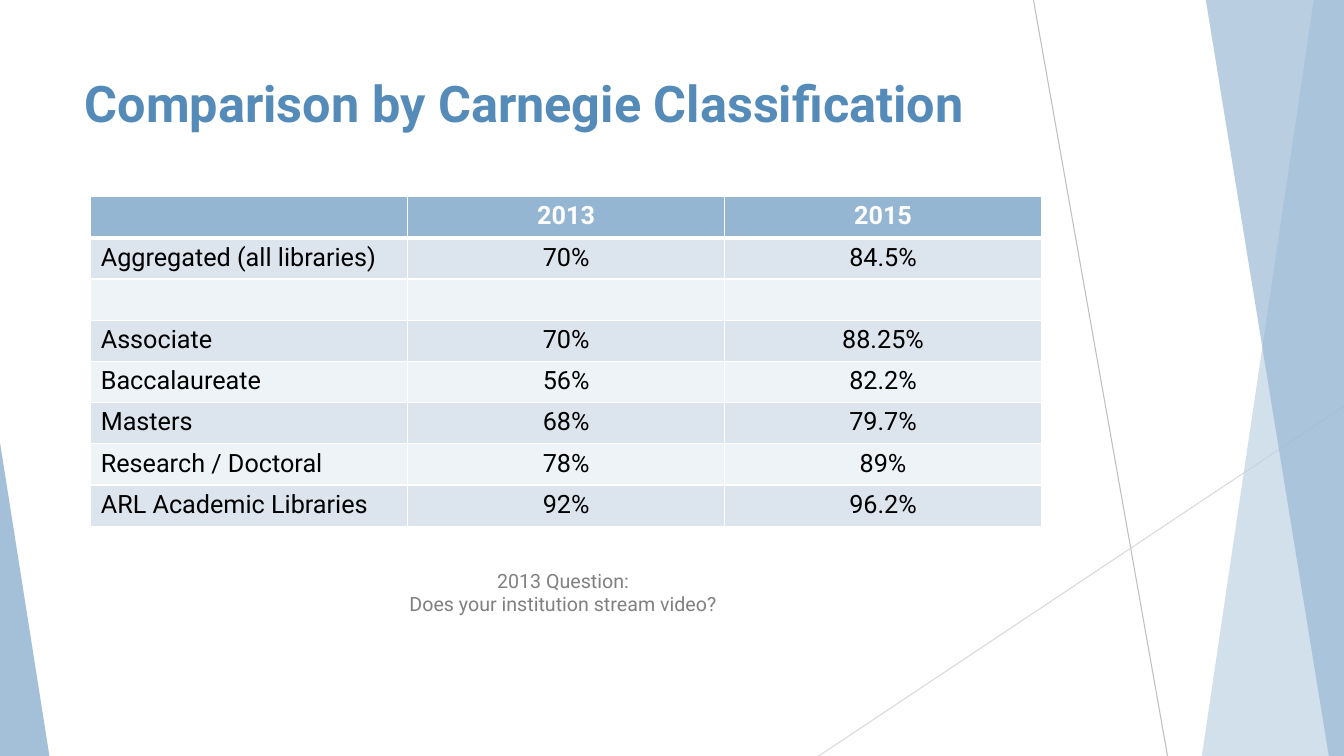
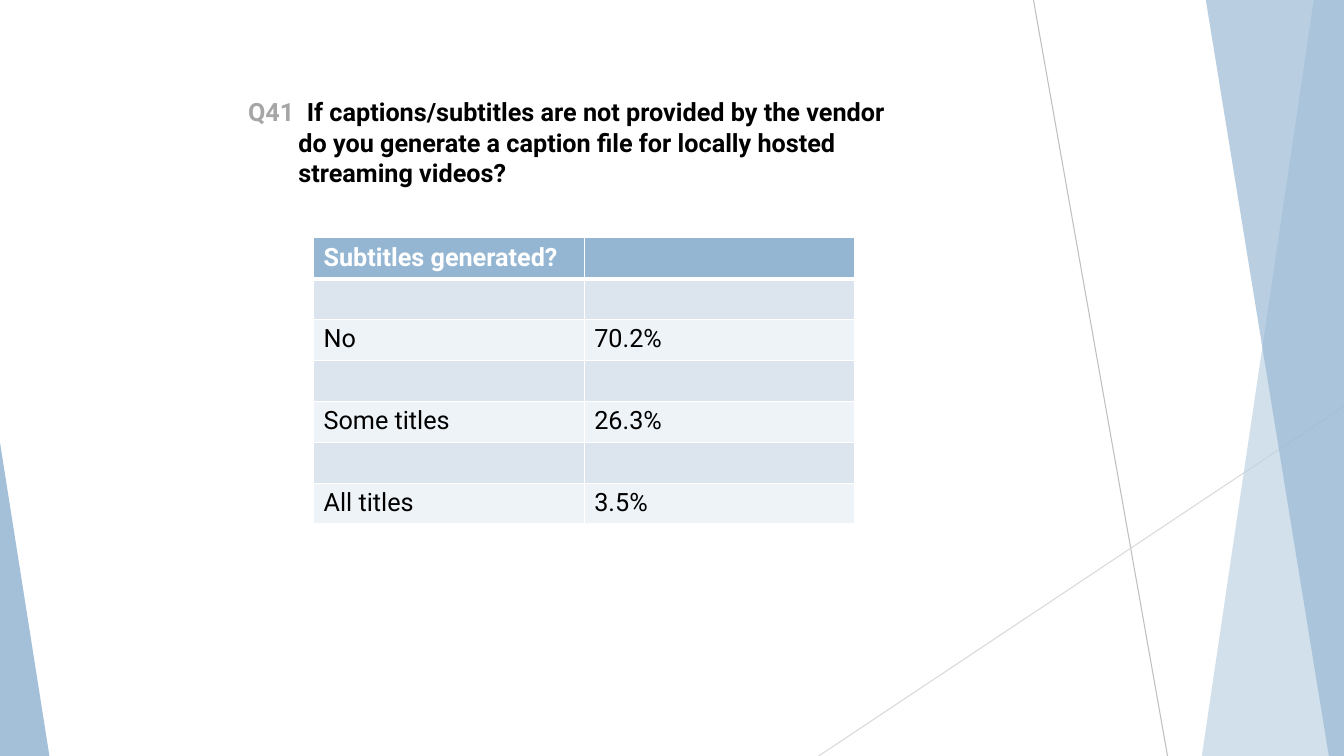
from lxml import etree
from pptx import Presentation
from pptx.dml.color import RGBColor
from pptx.enum.shapes import MSO_CONNECTOR, MSO_SHAPE
from pptx.enum.text import MSO_ANCHOR, MSO_AUTO_SIZE, PP_ALIGN
from pptx.oxml import parse_xml
from pptx.oxml.ns import nsdecls, qn
from pptx.util import Inches, Pt

STRAIGHT = MSO_CONNECTOR.STRAIGHT
TRIANGLE = MSO_SHAPE.ISOSCELES_TRIANGLE
LEFT, CENTER = PP_ALIGN.LEFT, PP_ALIGN.CENTER
TOP, FIXED = MSO_ANCHOR.TOP, MSO_AUTO_SIZE.NONE

FONT = "Roboto"
WIDE, HIGH = 13.33, 7.5
WHITE = RGBColor(0xFF, 0xFF, 0xFF)
BLACK = RGBColor(0, 0, 0)
BLUE = RGBColor(0x94, 0xB6, 0xD2)
PALE = RGBColor(0xBF, 0xD3, 0xE4)
DEEP = RGBColor(0x55, 0x8B, 0xB8)
ODD = RGBColor(0xDC, 0xE5, 0xEE)
EVEN = RGBColor(0xEE, 0xF3, 0xF7)
MUTED = RGBColor(0x80, 0x80, 0x80)
LABEL = RGBColor(0xA6, 0xA6, 0xA6)
GREY = RGBColor(0xBF, 0xBF, 0xBF)
LIGHT = RGBColor(0xD9, 0xD9, 0xD9)

# Content
TITLE = "Comparison by Carnegie Classification"
CLASSES = [
    ("", "2013", "2015"),
    ("Aggregated (all libraries)", "70%", "84.5%"),
    ("", "", ""),
    ("Associate", "70%", "88.25%"),
    ("Baccalaureate", "56%", "82.2%"),
    ("Masters", "68%", "79.7%"),
    ("Research / Doctoral", "78%", "89%"),
    ("ARL Academic Libraries", "92%", "96.2%"),
]
NOTE = ["2013 Question:", "Does your institution stream video?"]
NUMBER = "Q41  "
QUESTION = [
    "If captions/subtitles are not provided by the vendor",
    "do you generate a caption file for locally hosted",
    "streaming videos?",
]
TITLES = [
    ("Subtitles generated?", ""),
    ("", ""),
    ("No", "70.2%"),
    ("", ""),
    ("Some titles", "26.3%"),
    ("", ""),
    ("All titles", "3.5%"),
]

# Backdrop: lines as (from, to, colour), bands as (corners, colour, opacity)
LINES = [
    ((10.25, 0), (11.58, HIGH), GREY),
    ((WIDE, 4.03), (8.12, HIGH), LIGHT),
]
BANDS = [
    ([(13.03, 0), (WIDE, 0), (WIDE, HIGH), (11.92, HIGH)], PALE, 70),
    ([(11.96, 0), (WIDE, 0), (WIDE, HIGH), (13.18, HIGH)], BLUE, 65),
]
WEDGE = (0, 4.39, 0.49, 3.11)


def box(spot):
    return [Inches(v) for v in spot]


def style(para, size, color, bold=False, align=LEFT):
    para.alignment = align
    font = para.font
    font.name, font.size, font.bold = FONT, Pt(size), bold
    font.color.rgb = color


def tint(shape, color, share):
    shape.shadow.inherit = False
    shape.line.fill.background()
    shape.fill.solid()
    shape.fill.fore_color.rgb = color
    tone = shape.element.spPr.find(qn("a:solidFill"))[0]
    etree.SubElement(tone, qn("a:alpha")).set("val", str(share * 1000))


def backdrop(slide, master):
    """Draw the shared art, then hand it to the master."""
    shapes, art = slide.shapes, []
    for start, end, color in LINES:
        line = shapes.add_connector(STRAIGHT, *box(start + end))
        line.line.color.rgb = color
        line.line.width = Pt(0.75)
        etree.SubElement(line.element.spPr, qn("a:effectLst"))
        art.append(line)
    for points, color, share in BANDS:
        first, *rest = [box(p) for p in points]
        pen = shapes.build_freeform(*first)
        pen.add_line_segments(rest)
        band = pen.convert_to_shape()
        tint(band, color, share)
        art.append(band)
    wedge = shapes.add_shape(TRIANGLE, *box(WEDGE))
    wedge.adjustments[0] = 0
    tint(wedge, BLUE, 85)
    art.append(wedge)
    for num, shape in enumerate(art, 101):
        shape.element.xpath(".//p:cNvPr")[0].set("id", str(num))
        master.shapes.element.append(shape.element)


def heading(slide, spot):
    title = slide.shapes.title
    title.left, title.top, title.width, title.height = box(spot)
    frame = title.text_frame
    frame.vertical_anchor, frame.auto_size = TOP, FIXED
    frame.word_wrap = True
    return frame.paragraphs[0]


def border(cell, row):
    # The rule under the header is heavier than the rest
    wide = {"T": 3 if row == 1 else 1, "B": 3 if row == 0 else 1}
    props = cell._tc.get_or_add_tcPr()
    for spot, side in enumerate("LRTB"):
        props.insert(spot, parse_xml(
            f'<a:ln{side} {nsdecls("a")} w="{Pt(wide.get(side, 1))}">'
            f'<a:solidFill><a:srgbClr val="{WHITE}"/></a:solidFill>'
            f'</a:ln{side}>'))


def grid(slide, data, spot, align):
    rows, cols = len(data), len(data[0])
    table = slide.shapes.add_table(rows, cols, *box(spot)).table
    for r, line in enumerate(data):
        head = r == 0
        for c, text in enumerate(line):
            cell = table.cell(r, c)
            cell.text = text
            style(cell.text_frame.paragraphs[0], 18,
                  WHITE if head else BLACK, head, align if c else LEFT)
            cell.fill.solid()
            cell.fill.fore_color.rgb = BLUE if head else ODD if r % 2 else EVEN
            border(cell, r)


def compare(slide):
    para = heading(slide, (0.74, 0.67, 9.4, 1.44))
    para.text = TITLE
    style(para, 36, DEEP, True)
    grid(slide, CLASSES, (0.9, 1.95, 9.43, 3.27), CENTER)
    frame = slide.shapes.add_textbox(*box((3.94, 5.59, 3.29, 0.57))).text_frame
    frame.word_wrap = False
    frame.text = "\n".join(NOTE)
    for para in frame.paragraphs:
        style(para, 14, MUTED, align=CENTER)


def captions(slide):
    para = heading(slide, (2.36, 0.91, 6.95, 1.01))
    style(para, 18, BLACK, True)
    label = para.add_run()
    label.text = NUMBER
    label.font.color.rgb = LABEL
    for num, line in enumerate(QUESTION):
        if num:
            para.add_line_break()
        para.add_run().text = line
    # Hanging indent
    props = para._p.get_or_add_pPr()
    props.set("marL", str(Inches(0.5)))
    props.set("indent", str(-Inches(0.5)))
    grid(slide, TITLES, (3.11, 2.36, 5.37, 2.84), LEFT)


def main():
    deck = Presentation()
    deck.slide_width, deck.slide_height = box((WIDE, HIGH))
    layout = deck.slide_layouts.get_by_name("Title Only")
    pages = [deck.slides.add_slide(layout) for _ in range(2)]
    backdrop(pages[0], deck.slide_master)
    compare(pages[0])
    captions(pages[1])
    deck.save("out.pptx")


if __name__ == "__main__":
    main()
